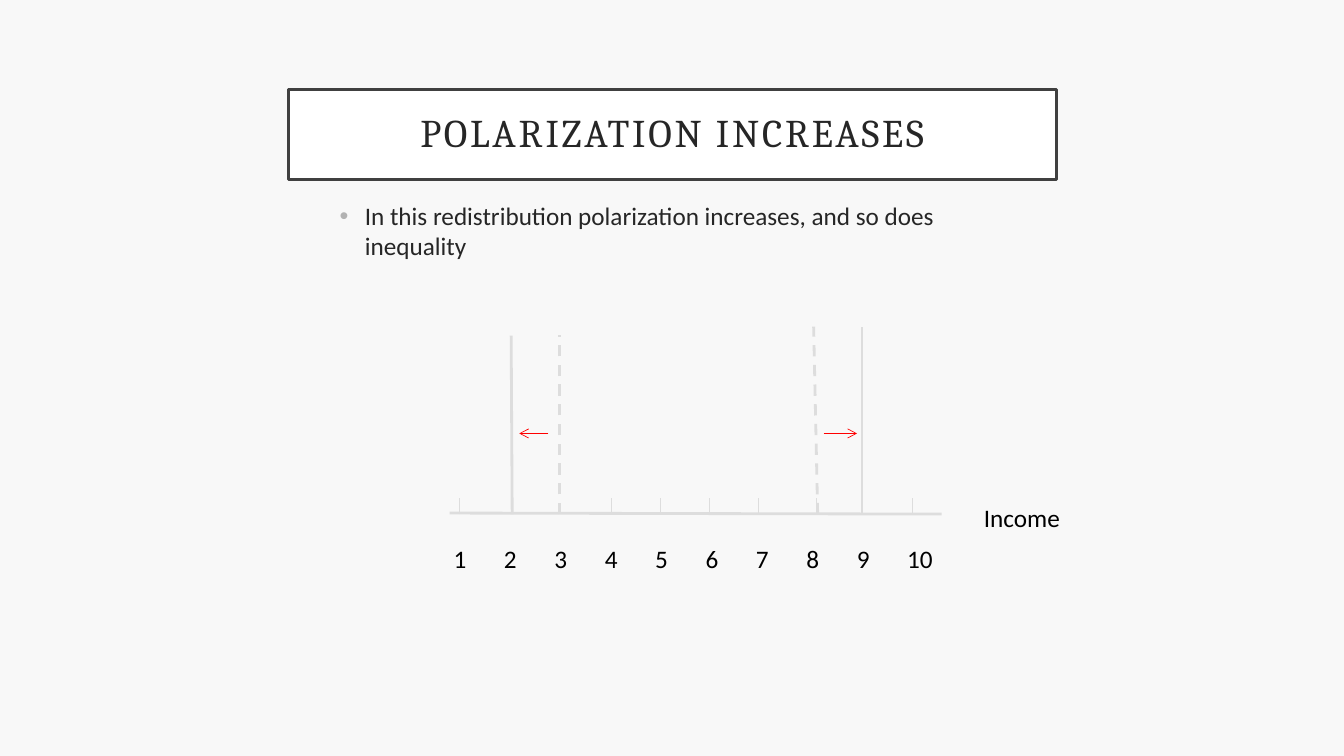
from lxml.etree import SubElement
from pptx import Presentation
from pptx.dml.color import RGBColor
from pptx.enum.dml import MSO_LINE_DASH_STYLE as DASH
from pptx.enum.shapes import MSO_CONNECTOR as CONNECTOR
from pptx.enum.text import MSO_ANCHOR as ANCHOR, MSO_AUTO_SIZE as AUTO, PP_ALIGN as ALIGN
from pptx.oxml.ns import qn
from pptx.util import Inches, Pt

TITLE = "POLARIZATION INCREASES"
BULLET = "In this redistribution polarization increases, and so does inequality"
AXIS_LABEL = "Income"
INCOMES = range(1, 11)
TICKS = [4.56, 6.06, 6.55, 7.04, 7.52, 8.1, 9.05]
# Income bars: bottom x, top x, top y, dashed
BARS = [(5.08, 5.07, 3.33, False), (5.55, 5.55, 3.32, True),
        (8.11, 8.07, 3.24, True), (8.55, 8.55, 3.24, False)]
# Shifts of the two groups: start x, end x
SHIFTS = [(5.44, 5.15), (8.17, 8.5)]

AXIS_Y, TICK_HEIGHT, SHIFT_Y = 5.1, 0.16, 4.3
LABEL_STEP = 0.5
GREY, RED, INK = "DDDDDD", "FF0000", "262626"


def rgb(color):
    return RGBColor.from_string(color)


def write(tf, text, size=18, font="Calibri", color="000000", align=ALIGN.LEFT):
    p = tf.paragraphs[0]
    p.alignment = align
    r = p.add_run()
    r.text = text
    r.font.size, r.font.name = Pt(size), font
    r.font.color.rgb = rgb(color)
    return p


def text_box(left, top, width, height, text, wrap=True, **fmt):
    tf = s.shapes.add_textbox(*map(Inches, (left, top, width, height))).text_frame
    tf.word_wrap = wrap
    return write(tf, text, **fmt)


def line(x1, y1, x2, y2, color=GREY, width=0.5, dashed=False, arrow=False):
    c = s.shapes.add_connector(CONNECTOR.STRAIGHT, *map(Inches, (x1, y1, x2, y2)))
    c.line.color.rgb = rgb(color)
    c.line.width = Pt(width)
    if dashed:
        c.line.dash_style = DASH.DASH
    if arrow:
        SubElement(c.line._get_or_add_ln(), qn("a:tailEnd"), type="arrow")
    SubElement(c._element.spPr, qn("a:effectLst"))


prs = Presentation()
prs.slide_width, prs.slide_height = Inches(13.33), Inches(7.5)
s = prs.slides.add_slide(prs.slide_layouts[5])
s.background.fill.solid()
s.background.fill.fore_color.rgb = rgb("F8F8F8")

# Framed title
title = s.shapes.title
title.left, title.top, title.width, title.height = map(Inches, (2.86, 0.89, 7.62, 0.89))
title.fill.solid()
title.fill.fore_color.rgb = rgb("FFFFFF")
title.line.color.rgb = rgb("404040")
title.line.width = Pt(2.5)
tf = title.text_frame
tf.auto_size, tf.word_wrap, tf.vertical_anchor = AUTO.NONE, True, ANCHOR.MIDDLE
tf.margin_left = tf.margin_right = tf.margin_top = tf.margin_bottom = Inches(0.2)
p = write(tf, TITLE, size=28, font="Cambria", color=INK, align=ALIGN.CENTER)
p.line_spacing = 0.9
p.runs[0].font._element.set("spc", "200")

# Bullet
p = text_box(3.27, 1.94, 6.78, 0.8, BULLET, color=INK)
p.space_before = Pt(10)
pPr = p._p.get_or_add_pPr()
pPr.set("marL", str(Inches(0.25)))
pPr.set("indent", str(-Inches(0.25)))
SubElement(SubElement(pPr, qn("a:buClr")), qn("a:srgbClr"), val="B2B2B2")
SubElement(pPr, qn("a:buFont"), typeface="Arial")
SubElement(pPr, qn("a:buChar"), char="•")

# Income axis with ticks
line(4.46, 5.09, 9.34, AXIS_Y, width=2)
for x in TICKS:
    line(x, AXIS_Y, x, AXIS_Y - TICK_HEIGHT)
text_box(9.66, 4.93, 0.99, 0.4, AXIS_LABEL, wrap=False)

# Axis numbers on evenly spaced tab stops
p = text_box(4.4, 5.34, 5, 0.4, "\t".join(map(str, INCOMES)))
tabs = SubElement(p._p.get_or_add_pPr(), qn("a:tabLst"))
for i in range(1, len(INCOMES)):
    SubElement(tabs, qn("a:tab"), pos=str(Inches(LABEL_STEP * i)), algn="l")

# Groups before (dashed) and after (solid), and their shifts
for bottom_x, top_x, top_y, dashed in BARS:
    line(bottom_x, AXIS_Y, top_x, top_y, width=2, dashed=dashed)
for start, end in SHIFTS:
    line(start, SHIFT_Y, end, SHIFT_Y, color=RED, arrow=True)

prs.save("out.pptx")
